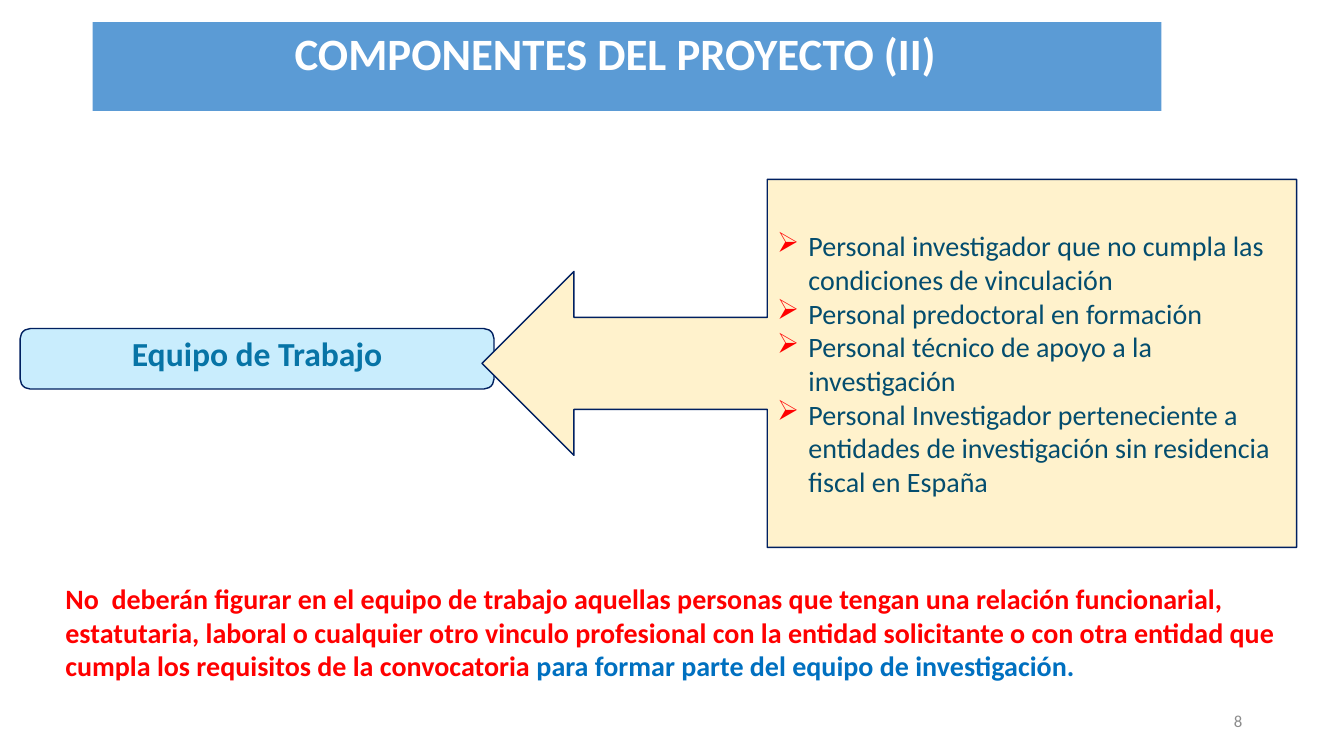
from lxml import etree
from pptx import Presentation
from pptx.dml.color import RGBColor
from pptx.enum import shapes, text
from pptx.oxml.ns import qn
from pptx.util import Inches, Pt

FONT = "Calibri"
WHITE = RGBColor(0xFF, 0xFF, 0xFF)
BANNER_BLUE = RGBColor(0x5B, 0x9B, 0xD5)
NAVY = RGBColor(0x00, 0x20, 0x60)
PALE_BLUE = RGBColor(0xC9, 0xED, 0xFD)
TEAM_BLUE = RGBColor(0x07, 0x74, 0xA6)
CREAM = RGBColor(0xFF, 0xF2, 0xCC)
MEMBER_BLUE = RGBColor(0x04, 0x4D, 0x6E)
RED = RGBColor(0xFF, 0x00, 0x00)
NOTE_BLUE = RGBColor(0x00, 0x70, 0xC0)
GREY = RGBColor(0x8C, 0x8C, 0x8C)

MEMBERS = [
    "Personal investigador que no cumpla las condiciones de vinculación",
    "Personal predoctoral en formación",
    "Personal técnico de apoyo a la investigación",
    "Personal Investigador perteneciente a entidades de investigación "
    "sin residencia fiscal en España",
]
WARNING = (
    "No  deberán figurar en el equipo de trabajo aquellas personas que tengan "
    "una relación funcionarial, estatutaria, laboral o cualquier otro vinculo "
    "profesional con la entidad solicitante o con otra entidad que cumpla los "
    "requisitos de la convocatoria "
)

presentation = Presentation()
presentation.slide_width = Inches(13.33)
presentation.slide_height = Inches(7.5)
slide = presentation.slides.add_slide(presentation.slide_layouts[6])


def add_filled_shape(kind, box, fill, line=None):
    shape = slide.shapes.add_shape(kind, *map(Inches, box))
    shape.shadow.inherit = False
    shape.fill.solid()
    shape.fill.fore_color.rgb = fill
    if line is None:
        shape.line.fill.background()
    else:
        shape.line.color.rgb = line
        shape.line.width = Pt(1)
    return shape


def add_run(paragraph, words, size, color, bold=False):
    run = paragraph.add_run()
    run.text = words
    run.font.name = FONT
    run.font.size = Pt(size)
    run.font.bold = bold
    run.font.color.rgb = color


add_filled_shape(shapes.MSO_SHAPE.RECTANGLE, (0.92, 0.22, 10.6, 0.88), BANNER_BLUE)
add_filled_shape(
    shapes.MSO_SHAPE.ROUNDED_RECTANGLE, (0.2, 3.26, 4.7, 0.6), PALE_BLUE, NAVY
)

callout = add_filled_shape(
    shapes.MSO_SHAPE.LEFT_ARROW_CALLOUT, (4.78, 1.78, 8.08, 3.65), CREAM, NAVY
)
callout.text_frame.vertical_anchor = text.MSO_ANCHOR.MIDDLE
for index, member in enumerate(MEMBERS):
    frame = callout.text_frame
    paragraph = frame.add_paragraph() if index else frame.paragraphs[0]
    paragraph.alignment = text.PP_ALIGN.LEFT
    properties = paragraph._p.get_or_add_pPr()
    properties.set("marL", str(Inches(0.31)))
    properties.set("indent", str(-Inches(0.31)))
    bullet_color = etree.SubElement(properties, qn("a:buClr"))
    etree.SubElement(bullet_color, qn("a:srgbClr"), val=str(RED))
    etree.SubElement(properties, qn("a:buChar"), char="➢")
    add_run(paragraph, member, 20, MEMBER_BLUE)

# Box, alignment, anchor, line spacing, runs
TOP, MIDDLE = text.MSO_ANCHOR.TOP, text.MSO_ANCHOR.MIDDLE
LEFT, CENTER, RIGHT = text.PP_ALIGN.LEFT, text.PP_ALIGN.CENTER, text.PP_ALIGN.RIGHT
LABELS = [
    ((0.31, 0.29, 11.59, 0.66), CENTER, TOP, 0.85,
     [("COMPONENTES DEL PROYECTO (II)", 32, WHITE, True)]),
    ((0.81, 3.25, 3.48, 0.5), CENTER, TOP, 1.0,
     [("Equipo de Trabajo", 24, TEAM_BLUE, True)]),
    ((0.55, 5.72, 12.24, 1.11), LEFT, TOP, 1.0,
     [(WARNING, 20, RED, True),
      ("para formar parte del equipo de investigación.", 20, NOTE_BLUE, True)]),
    ((9.42, 6.95, 3, 0.4), RIGHT, MIDDLE, 1.0, [("8", 12, GREY)]),
]
for box, alignment, anchor, spacing, runs in LABELS:
    frame = slide.shapes.add_textbox(*map(Inches, box)).text_frame
    frame.word_wrap = True
    frame.vertical_anchor = anchor
    paragraph = frame.paragraphs[0]
    paragraph.alignment = alignment
    paragraph.line_spacing = spacing
    for run in runs:
        add_run(paragraph, *run)

presentation.save("out.pptx")
